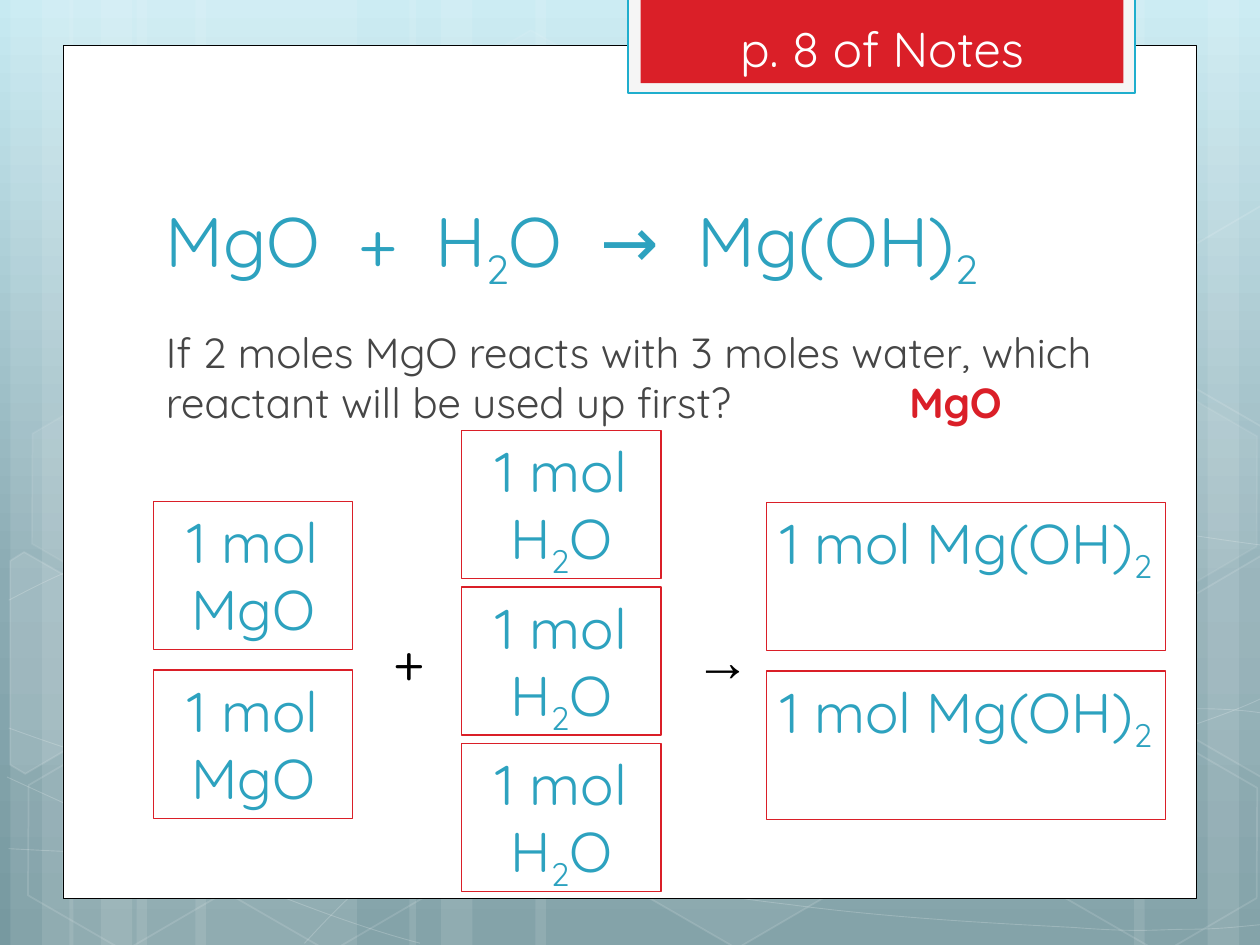
from copy import deepcopy
from math import cos, radians, sin

from lxml.etree import SubElement
from pptx import Presentation
from pptx.dml.color import RGBColor
from pptx.enum.shapes import MSO_SHAPE
from pptx.enum.text import MSO_ANCHOR, MSO_AUTO_SIZE, PP_ALIGN
from pptx.oxml.ns import qn
from pptx.util import Pt

COLORS = {"white": "FFFFFF", "black": "000000", "red": "DA1F28", "teal": "2DA2BF",
          "gray": "464646", "pale": "F5F5F5", "border": "1FAECD"}
BACKGROUND_STOPS = [(0, "C7EAF2"), (0.62, "8BABB3"), (1, "7799A0")]
TILT = 30

FORMULA = {"size": Pt(40), "name": "Quicksand", "color": "teal"}
QUESTION = {"size": Pt(24), "name": "Quicksand", "color": "gray"}
ANSWER = {"size": Pt(24), "name": "Quicksand", "color": "red", "bold": True}
PAGE_NOTE = {"size": Pt(28), "name": "Quicksand", "color": "white"}
CARD = {"size": Pt(32), "name": "Quicksand", "color": "teal"}
PLUS = {"size": Pt(32), "name": "Quicksand", "color": "black"}
ARROW = {"size": Pt(32), "name": "Times New Roman", "color": "black"}

# Left edge and width of each translucent stripe, turned by the given angle
STRIPES = [(78, 126, 0), (6, 36, 0), (24, 60, 0), (111.6, 126, 0), (39.6, 36, 0),
           (57.6, 60, 0), (528, 126, 180), (690, 36, 180), (648, 60, 180),
           (306, 222, 0), (234, 36, 0), (252, 60, 0)]
# Start point, then control, control and end point of each Bezier segment
CURVES = [
    [(5, 485), (44, 487), (83, 489), (137, 488), (191, 487), (258, 486), (330, 479),
     (402, 472), (504, 458), (570, 444), (636, 431), (703, 409), (725, 397)],
    [(5, 343), (26, 332), (47, 321), (87, 310), (128, 300), (186, 284), (250, 279),
     (314, 274), (392, 273), (471, 279), (550, 284), (682, 307), (725, 312)],
    [(4, 444), (91, 484), (178, 523), (240, 539)],
    [(5, 416), (27, 424), (50, 432), (92, 444), (134, 454), (197, 472), (257, 485),
     (317, 497), (392, 510), (452, 517), (512, 525), (576, 528), (614, 530),
     (652, 533), (662, 531), (680, 531), (699, 531), (712, 529), (725, 528)],
    [(174, 539), (187, 525), (200, 511), (217, 498), (235, 485), (259, 470), (279, 460),
     (300, 450), (312, 446), (338, 438), (364, 431), (413, 421), (438, 416),
     (464, 411), (467, 411), (490, 410), (512, 408), (547, 405), (572, 405),
     (597, 404), (638, 405), (638, 405), (654, 405), (670, 405), (686, 405),
     (699, 405), (711, 406), (718, 407), (724, 408), (722, 407), (724, 408)],
]
# Left, top, fill opacity and line opacity in percent
HEXAGONS = [(240.5, 25.9, 4, 8), (357.8, 424.1, 6, 12), (7.9, 425.5, None, 12),
            (10.1, 224.6, 7, 8), (125.3, 426.2, None, 12), (542.2, 326.2, 10, 12),
            (600.5, 427, None, 12), (600.5, 226.1, 7, 8)]
# Turning centre, corner points and fill opacity of the hexagons cut by the slide edge
CUT_HEXAGONS = [
    ((25.9, 385.2), [(5.8, 320.4), (13.7, 315.4), (69.1, 347), (68.4, 410.4),
                     (14.4, 442.1), (5.8, 437)], 10),
    ((709.2, 374.4), [(666.7, 349.2), (720.7, 317.5), (726.5, 321.1), (726.5, 441.4),
                      (721.4, 444.2), (666.7, 412.6)], 4),
    ((709.2, 173.5), [(666.7, 149), (720.7, 117.4), (727.2, 121), (726.5, 241.2),
                      (721.4, 244.1), (666.7, 212.4)], None),
]
# Left, top, width, row pitch, count and text of each card column
CARD_COLUMNS = [(0, 40.4, 113.9, 96.5, 2, ["1 mol MgO"]),
                (176, 0, 114, 89.4, 3, ["1 mol H", "2", "O"]),
                (350.3, 41, 228, 96.5, 2, ["1 mol Mg(OH)", "2"])]


def paint(fill, color, opacity=100):
    fill.solid()
    fill.fore_color.rgb = RGBColor.from_string(COLORS[color])
    if opacity < 100:
        rgb = fill._xPr.find(qn("a:solidFill")).find(qn("a:srgbClr"))
        SubElement(rgb, qn("a:alpha"), val=str(opacity * 1000))


def style_shape(shape, fill=None, fill_opacity=100, line=None, width=1, line_opacity=100):
    shape.shadow.inherit = False
    if fill:
        paint(shape.fill, fill, fill_opacity)
    else:
        shape.fill.background()
    if line:
        shape.line.width = Pt(width)
        paint(shape.line.fill, line, line_opacity)
    else:
        shape.line.fill.background()


def add_preset(slide, kind, box, **style):
    shape = slide.shapes.add_shape(kind, *map(Pt, box))
    style_shape(shape, **style)
    return shape


def add_outline(slide, points, close, **style):
    points = [(Pt(x), Pt(y)) for x, y in points]
    builder = slide.shapes.build_freeform(*points[0], scale=1)
    builder.add_line_segments(points[1:], close=close)
    shape = builder.convert_to_shape()
    style_shape(shape, **style)
    return shape


def add_curve(slide, nodes, **style):
    """Draw an open outline and turn each three segments into one Bezier segment."""
    outline = add_outline(slide, nodes, False, **style).element.find(".//" + qn("a:path"))
    segments = outline.findall(qn("a:lnTo"))
    for start in range(0, len(segments), 3):
        curve = SubElement(outline, qn("a:cubicBezTo"))
        for segment in segments[start:start + 3]:
            curve.append(segment[0])
            outline.remove(segment)


def turn_back(point, center):
    dx, dy = point[0] - center[0], point[1] - center[1]
    c, s = cos(radians(TILT)), sin(radians(TILT))
    return center[0] + c * dx + s * dy, center[1] - s * dx + c * dy


def write(shape, parts, values, align=PP_ALIGN.CENTER, anchor=MSO_ANCHOR.TOP):
    """Fill a shape with one paragraph; every second part is a subscript."""
    frame = shape.text_frame
    for name, value in {"word_wrap": True, "auto_size": MSO_AUTO_SIZE.NONE,
                        "vertical_anchor": anchor}.items():
        setattr(frame, name, value)
    paragraph = frame.paragraphs[0]
    paragraph.alignment = align
    for index, part in enumerate(parts):
        run = paragraph.add_run()
        run.text = part
        for name, value in values.items():
            if name == "color":
                run.font.color.rgb = RGBColor.from_string(COLORS[value])
            else:
                setattr(run.font, name, value)
        if index % 2:
            run._r.get_or_add_rPr().set("baseline", "-25000")
    return paragraph


def add_label(slide, box, text, values):
    write(slide.shapes.add_textbox(*map(Pt, box)), [text], values)


def add_backdrop(slide, box):
    left, top, _, height = box
    fill = slide.background.fill
    fill.gradient()
    fill.gradient_angle = 270
    stop_list = slide.element.find(".//" + qn("a:gsLst"))
    stop_list.append(deepcopy(stop_list[-1]))
    for stop, (position, color) in zip(fill.gradient_stops, BACKGROUND_STOPS):
        stop.position = position
        stop.color.rgb = RGBColor.from_string(color)
    for x, width, angle in STRIPES:
        stripe = add_preset(slide, MSO_SHAPE.RECTANGLE, (left + x, top, width, height),
                            fill="white", fill_opacity=10)
        stripe.rotation = angle
    for nodes in CURVES:
        add_curve(slide, [(left + x, top + y) for x, y in nodes],
                  line="white", width=0.5, line_opacity=20)
    for x, y, opacity, line_opacity in HEXAGONS:
        hexagon = add_preset(slide, MSO_SHAPE.HEXAGON, (left + x, top + y, 126, 109.4),
                             fill=opacity and "white", fill_opacity=opacity,
                             line="white", line_opacity=line_opacity)
        hexagon.rotation = TILT
        hexagon.adjustments[0] = 0.285
    for center, corners, opacity in CUT_HEXAGONS:
        points = [turn_back(corner, center) for corner in corners]
        cut = add_outline(slide, [(left + x, top + y) for x, y in points], True,
                          fill=opacity and "white", fill_opacity=opacity,
                          line="white", line_opacity=12)
        cut.rotation = TILT


def add_page_tab(slide, box):
    left, top, width, height = box
    add_preset(slide, MSO_SHAPE.RECTANGLE, box, fill="pale", line="border", width=1.25)
    inner_left, inner_width = left + 7, width - 13.7
    add_preset(slide, MSO_SHAPE.RECTANGLE, (inner_left, top, inner_width, height - 5.8),
               fill="red")
    add_label(slide, (inner_left, top + 8.2, inner_width, 41), "p. 8 of Notes", PAGE_NOTE)


def place_placeholder(slide, placeholder, box, parts, values, anchor):
    for name, value in zip(("left", "top", "width", "height"), box):
        setattr(placeholder, name, Pt(value))
    slide.shapes.element.append(placeholder.element)  # bring to front
    paragraph = write(placeholder, parts, values, PP_ALIGN.LEFT, anchor)
    properties = paragraph._p.get_or_add_pPr()
    properties.set("marL", str(Pt(5)))
    properties.set("indent", "0")
    SubElement(properties, qn("a:buNone"))
    return paragraph


def add_question(slide, box):
    left, top, width, height = box
    place_placeholder(slide, slide.shapes.title, (left, top, width, 90),
                      ["MgO  +  H", "2", "O  →  Mg(OH)", "2"], FORMULA, MSO_ANCHOR.BOTTOM)
    question = ("If 2 moles MgO reacts with 3 moles water, "
                "which reactant will be used up first?")
    paragraph = place_placeholder(slide, slide.placeholders[1],
                                  (left, top + 101.9, width + 7.2, height - 101.9),
                                  [question], QUESTION, MSO_ANCHOR.TOP)
    paragraph.space_after = Pt(6)
    add_label(slide, (left + 421.4, top + 130.6, 84, 36), "MgO", ANSWER)


def add_reaction(slide, box):
    left, top = box[:2]
    for x, y, width, pitch, count, parts in CARD_COLUMNS:
        for row in range(count):
            card = add_preset(slide, MSO_SHAPE.RECTANGLE,
                              (left + x, top + y + row * pitch, width, 84.7),
                              line="red", width=0.75)
            card.text_frame.margin_left = card.text_frame.margin_right = Pt(6)
            write(card, parts, CARD)
    for x, symbol, values in ((128.2, "+", PLUS), (302.1, "→", ARROW)):
        add_label(slide, (left + x, top + 107.8, 36, 46), symbol, values)


def main():
    presentation = Presentation()
    presentation.slide_width, presentation.slide_height = Pt(720), Pt(540)
    slide = presentation.slides.add_slide(presentation.slide_layouts[1])
    add_backdrop(slide, (0, 0, 720, 540))
    # White page
    add_preset(slide, MSO_SHAPE.RECTANGLE, (36, 26, 648, 487.2),
               fill="white", line="black", width=0.5)
    add_page_tab(slide, (359, -1.4, 289.7, 54.7))
    add_question(slide, (82.6, 81, 553, 429))
    add_reaction(slide, (87.8, 246, 578.3, 263.5))
    presentation.save("out.pptx")


if __name__ == "__main__":
    main()
